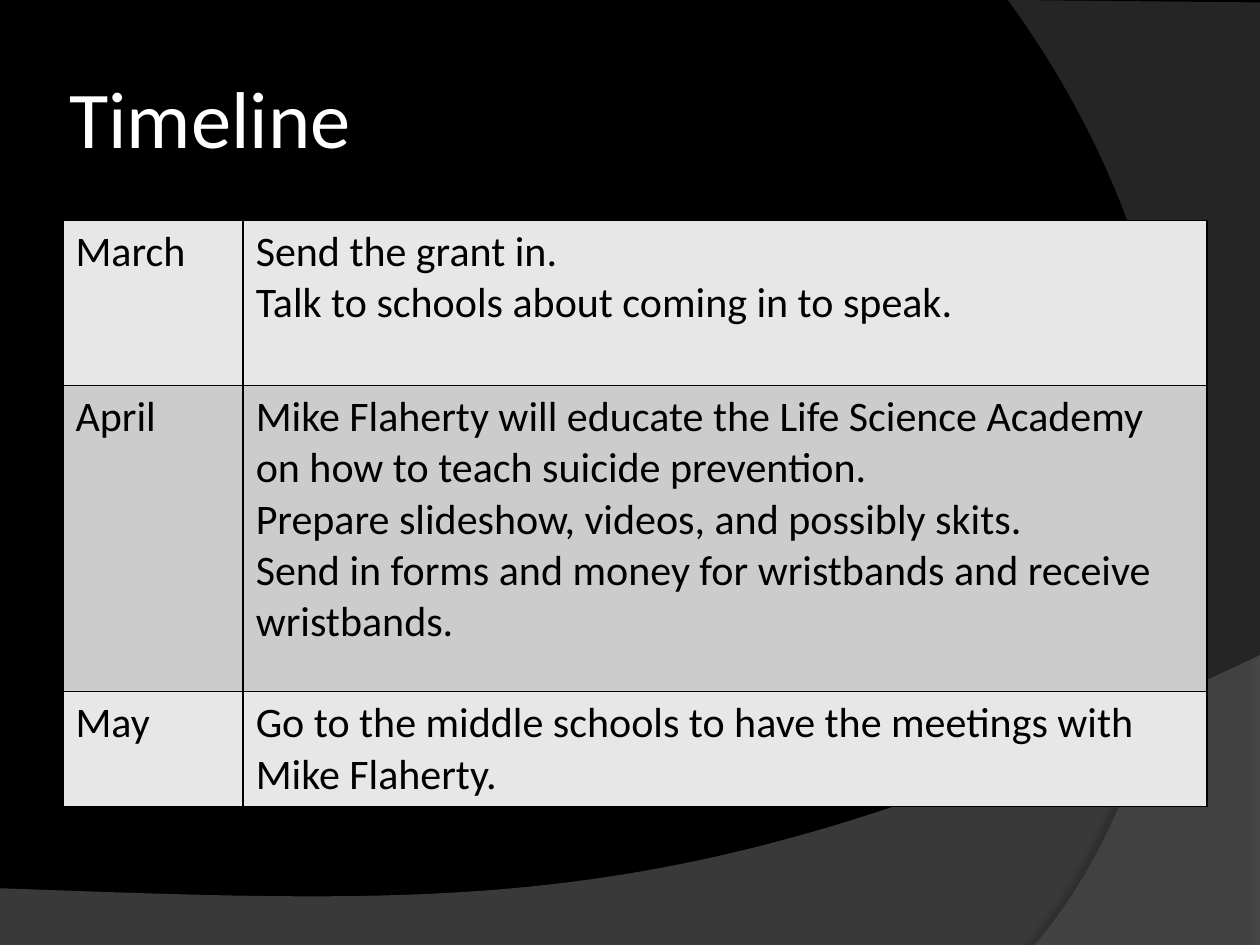
from dataclasses import dataclass

from lxml import etree
from pptx import Presentation
from pptx.dml.color import RGBColor
from pptx.enum.text import MSO_ANCHOR
from pptx.oxml.ns import qn
from pptx.util import Inches, Pt


@dataclass(frozen=True)
class Theme:
    font: str = "Calibri"
    title_size: int = 46
    body_size: int = 24
    background: str = "000000"
    title: str = "FFFFFF"
    body: str = "000000"
    border: str = "000000"
    bands: tuple = ("E7E7E7", "CCCCCC")
    bottom_swoosh: str = "7F7F7F"
    right_swoosh: str = "5E5E5E"


THEME = Theme()

SCHEDULE = [
    ("March", ["Send the grant in.",
               "Talk to schools about coming in to speak."]),
    ("April", ["Mike Flaherty will educate the Life Science Academy on how to "
               "teach suicide prevention.",
               "Prepare slideshow, videos, and possibly skits.",
               "Send in forms and money for wristbands and receive wristbands."]),
    ("May", ["Go to the middle schools to have the meetings with Mike Flaherty."]),
]
ROW_HEIGHTS = (1.31, 2.43, 0.91)
MONTH_WIDTH = 1.43


def paint(fill, color):
    fill.solid()
    fill.fore_color.rgb = RGBColor.from_string(color)


def add_color(parent, color, opacity=100):
    node = etree.SubElement(parent, qn("a:srgbClr"), val=color)
    if opacity < 100:
        etree.SubElement(node, qn("a:alpha"), val=str(opacity * 1000))


def write(frame, paragraphs, *, size, color):
    frame.word_wrap = True
    for index, text in enumerate(paragraphs):
        paragraph = frame.add_paragraph() if index else frame.paragraphs[0]
        run = paragraph.add_run()
        run.text = text
        run.font.name = THEME.font
        run.font.size = Pt(size)
        run.font.color.rgb = RGBColor.from_string(color)


def bezier(start, control1, control2, end, steps=60):
    """Points along a cubic curve, without its start."""
    for step in range(1, steps + 1):
        t = step / steps
        weights = ((1 - t) ** 3, 3 * t * (1 - t) ** 2, 3 * t * t * (1 - t), t ** 3)
        yield tuple(sum(w * p for w, p in zip(weights, axis))
                    for axis in zip(start, control1, control2, end))


def add_swoosh(slide, box, corners, curve, *, color, opacity, shadow):
    """Translucent outline: straight corners, then a curve from the last one."""
    left, top = box[:2]
    outline = [(Inches(left + x), Inches(top + y))
               for x, y in [*corners, *bezier(corners[-1], *curve)]]
    builder = slide.shapes.build_freeform(*outline[0])
    builder.add_line_segments(outline[1:], close=True)
    swoosh = builder.convert_to_shape()
    swoosh.line.fill.background()
    swoosh.shadow.inherit = False
    paint(swoosh.fill, color)
    properties = swoosh._element.spPr
    fill_color = properties.find(qn("a:solidFill")).find(qn("a:srgbClr"))
    etree.SubElement(fill_color, qn("a:alpha"), val=str(opacity * 1000))
    shadow_opacity, blur, distance, angle = shadow
    outer = etree.SubElement(
        properties.find(qn("a:effectLst")), qn("a:outerShdw"),
        blurRad=str(Pt(blur)), dist=str(Pt(distance)), dir=str(angle * 60000),
        algn="ctr", rotWithShape="0")
    add_color(outer, "000000", shadow_opacity)


def add_backdrop(slide, width, height):
    paint(slide.background.fill, THEME.background)
    bottom = (0, 5.2, width, height - 5.2)
    add_swoosh(slide, bottom,
               [(0, 1.85), (0, bottom[3]), (width, bottom[3]), (width, 0)],
               [(5.59, 2.09), (3.91, 1.99), (0, 1.85)],
               color=THEME.bottom_swoosh, opacity=45, shadow=(35, 4, 3.5, 270))
    right = (8, 0, width - 8, height)
    add_swoosh(slide, right,
               [(right[2], 0.02), (right[2], height), (0.21, height)],
               [(1.35, 6.19), (2.18, 3), (0, 0)],
               color=THEME.right_swoosh, opacity=40, shadow=(45, 4, 4, 180))


def add_title(slide, box, text):
    frame = slide.shapes.add_textbox(*map(Inches, box)).text_frame
    frame.vertical_anchor = MSO_ANCHOR.MIDDLE
    frame.margin_left = frame.margin_right = Inches(0.05)
    frame.margin_top = frame.margin_bottom = Inches(0.05)
    write(frame, [text], size=THEME.title_size, color=THEME.title)


def add_borders(cell):
    properties = cell._tc.get_or_add_tcPr()
    for side in ("lnL", "lnR", "lnT", "lnB"):
        line = etree.SubElement(properties, qn(f"a:{side}"), w=str(Pt(1)))
        add_color(etree.SubElement(line, qn("a:solidFill")), THEME.border)


def add_schedule(slide, box):
    table = slide.shapes.add_table(len(SCHEDULE), 2, *map(Inches, box)).table
    table.first_row = table.horz_banding = False
    table.columns[0].width = Inches(MONTH_WIDTH)
    table.columns[1].width = Inches(box[2] - MONTH_WIDTH)
    for index, (month, tasks) in enumerate(SCHEDULE):
        table.rows[index].height = Inches(ROW_HEIGHTS[index])
        for column, paragraphs in enumerate(([month], tasks)):
            cell = table.cell(index, column)
            add_borders(cell)
            paint(cell.fill, THEME.bands[index % 2])
            write(cell.text_frame, paragraphs,
                  size=THEME.body_size, color=THEME.body)


def main():
    width, height = 10, 7.5
    deck = Presentation()
    deck.slide_width, deck.slide_height = Inches(width), Inches(height)
    slide = deck.slides.add_slide(deck.slide_layouts[6])
    add_backdrop(slide, width, height)
    add_title(slide, (0.5, 0.3, 8.17, 1.25), "Timeline")
    add_schedule(slide, (0.5, 1.75, 9.08, sum(ROW_HEIGHTS)))
    deck.save("out.pptx")


if __name__ == "__main__":
    main()
